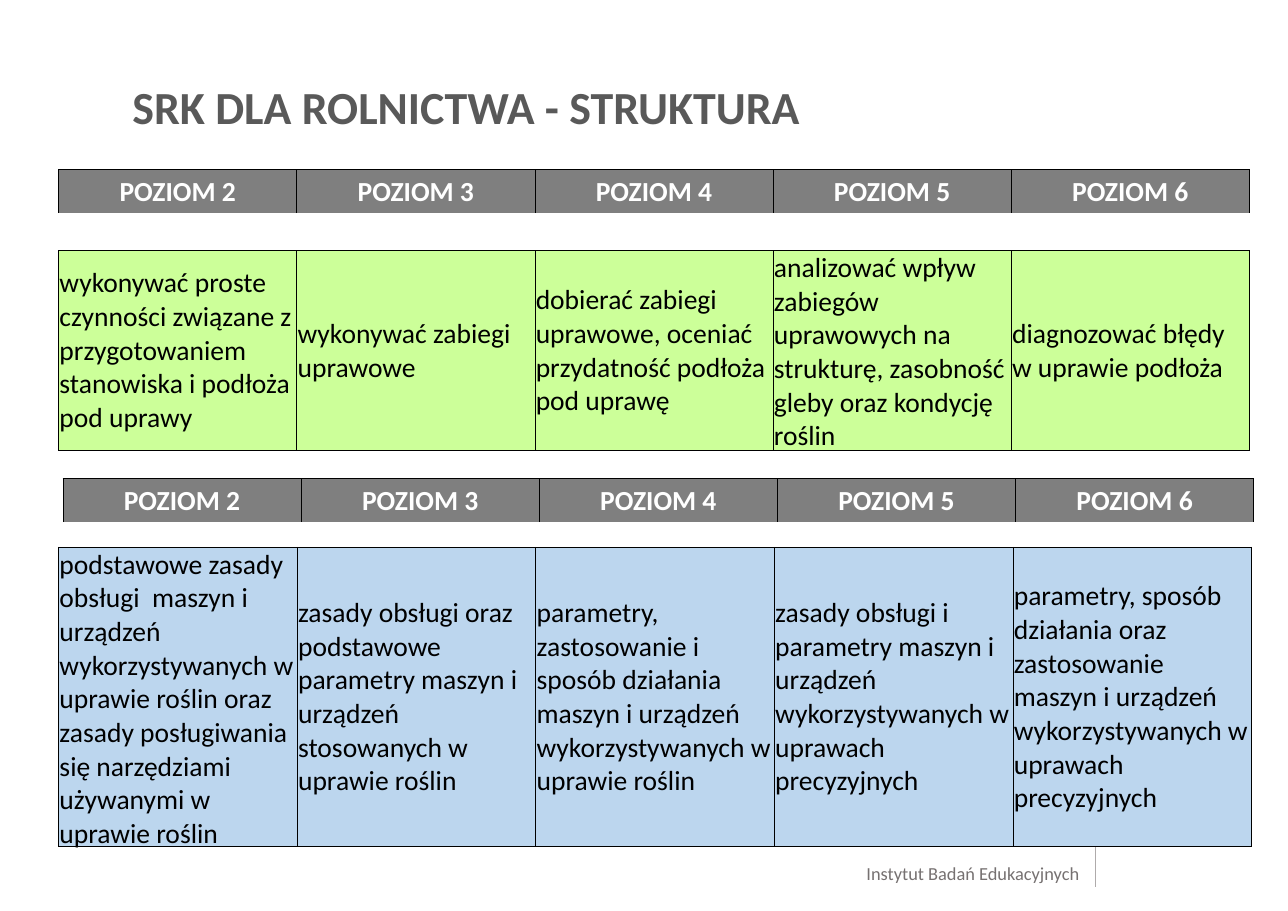
from dataclasses import dataclass

from lxml import etree
from pptx import Presentation
from pptx.dml.color import RGBColor
from pptx.enum.shapes import MSO_CONNECTOR
from pptx.enum.text import MSO_ANCHOR, PP_ALIGN
from pptx.oxml.ns import qn
from pptx.util import Cm, Pt

LINE = MSO_CONNECTOR.STRAIGHT
MIDDLE = MSO_ANCHOR.MIDDLE
LEFT, CENTER = PP_ALIGN.LEFT, PP_ALIGN.CENTER


@dataclass(frozen=True)
class Theme:
    font: str = "Calibri"
    title_size: int = 30
    cell_size: int = 18
    footer_size: int = 12
    title: str = "595959"
    footer: str = "767171"
    rule: str = "AFABAB"
    border: str = "000000"
    text: str = "000000"
    header_text: str = "FFFFFF"
    header: str = "7F7F7F"
    skills: str = "CCFF99"
    knowledge: str = "BCD6EE"
    border_width: float = 0.5


THEME = Theme()

LEVELS = [f"POZIOM {n}" for n in range(2, 7)]
SKILLS = [
    "wykonywać proste czynności związane z przygotowaniem stanowiska i podłoża pod uprawy",
    "wykonywać zabiegi uprawowe",
    "dobierać zabiegi uprawowe, oceniać przydatność podłoża pod uprawę",
    "analizować wpływ zabiegów uprawowych na strukturę, zasobność gleby oraz kondycję roślin",
    "diagnozować błędy w uprawie podłoża",
]
KNOWLEDGE = [
    "podstawowe zasady obsługi  maszyn i urządzeń  wykorzystywanych w uprawie roślin "
    "oraz zasady posługiwania się narzędziami używanymi w uprawie roślin",
    "zasady obsługi oraz podstawowe parametry maszyn i urządzeń stosowanych w uprawie roślin",
    "parametry, zastosowanie i sposób działania maszyn i urządzeń "
    "wykorzystywanych w uprawie roślin",
    "zasady obsługi i parametry maszyn i urządzeń wykorzystywanych w uprawach precyzyjnych",
    "parametry, sposób działania oraz zastosowanie maszyn i urządzeń "
    "wykorzystywanych w uprawach precyzyjnych",
]


def style_text(p, size, color, bold=False):
    for r in p.runs:
        r.font.name = THEME.font
        r.font.size = Pt(size)
        r.font.bold = bold
        r.font.color.rgb = RGBColor.from_string(color)


def add_text(s, box, text, size, color, bold=False, wrap=True):
    tf = s.shapes.add_textbox(*(Cm(v) for v in box)).text_frame
    tf.margin_left = tf.margin_right = tf.margin_top = tf.margin_bottom = 0
    tf.word_wrap = wrap
    p = tf.paragraphs[0]
    p.text = text
    style_text(p, size, color, bold)
    return p


def set_borders(cell, widths):
    """Draw the left, right, top and bottom edges; a width of 0 hides an edge."""
    tc_pr = cell._tc.get_or_add_tcPr()
    for i, (side, width) in enumerate(zip("LRTB", widths)):
        ln = etree.Element(qn(f"a:ln{side}"), w=str(Pt(width)))
        if width:
            fill = etree.SubElement(ln, qn("a:solidFill"))
            etree.SubElement(fill, qn("a:srgbClr"), val=THEME.border)
        else:
            etree.SubElement(ln, qn("a:noFill"))
        tc_pr.insert(i, ln)


def add_row_table(s, box, texts, fill, color, align, bold, borders):
    """Place a one-row table with equal columns that fill the box."""
    left, top, width, height = (Cm(v) for v in box)
    table = s.shapes.add_table(1, len(texts), left, top, width, height).table
    table.first_row = table.horz_banding = False
    for cell, text in zip(table.rows[0].cells, texts):
        cell.fill.solid()
        cell.fill.fore_color.rgb = RGBColor.from_string(fill)
        set_borders(cell, borders)
        cell.vertical_anchor = MIDDLE
        cell.margin_left = cell.margin_right = cell.margin_top = Cm(0.02)
        cell.margin_bottom = 0
        p = cell.text_frame.paragraphs[0]
        p.text = text
        p.alignment = align
        style_text(p, THEME.cell_size, color, bold)


def add_level_header(s, box, top_border):
    thin = THEME.border_width
    add_row_table(s, box, LEVELS, THEME.header, THEME.header_text, CENTER, True,
                  (thin, thin, top_border, 0))


def add_descriptions(s, box, texts, fill):
    add_row_table(s, box, texts, fill, THEME.text, LEFT, False,
                  [THEME.border_width] * 4)


def add_title(s, box):
    p = add_text(s, box, "SRK DLA ROLNICTWA - STRUKTURA",
                 THEME.title_size, THEME.title, bold=True)
    p.line_spacing = 0.9


def add_footer(s, box):
    left, top, width, height = box
    add_text(s, (left, top + 0.41, width, 0.53), "Instytut Badań Edukacyjnych",
             THEME.footer_size, THEME.footer, wrap=False)
    x = Cm(left + width)
    rule = s.shapes.add_connector(LINE, x, Cm(top + height), x, Cm(top))
    rule.line.color.rgb = RGBColor.from_string(THEME.rule)
    rule.line.width = Pt(0.5)
    etree.SubElement(rule._element.spPr, qn("a:effectLst"))


def main():
    prs = Presentation()
    prs.slide_width, prs.slide_height = Cm(29.67), Cm(20.98)
    s = prs.slides.add_slide(prs.slide_layouts[6])

    add_footer(s, (19.96, 19.45, 5.28, 0.97))
    add_title(s, (3.05, 1.96, 25.58, 2.16))
    add_level_header(s, (1.35, 3.91, 27.43, 1), top_border=1)
    add_descriptions(s, (1.35, 5.77, 27.43, 4.6), SKILLS, THEME.skills)
    add_level_header(s, (1.45, 11.02, 27.43, 1), top_border=0.5)
    add_descriptions(s, (1.35, 12.6, 27.48, 6.9), KNOWLEDGE, THEME.knowledge)

    prs.save("out.pptx")


if __name__ == "__main__":
    main()
